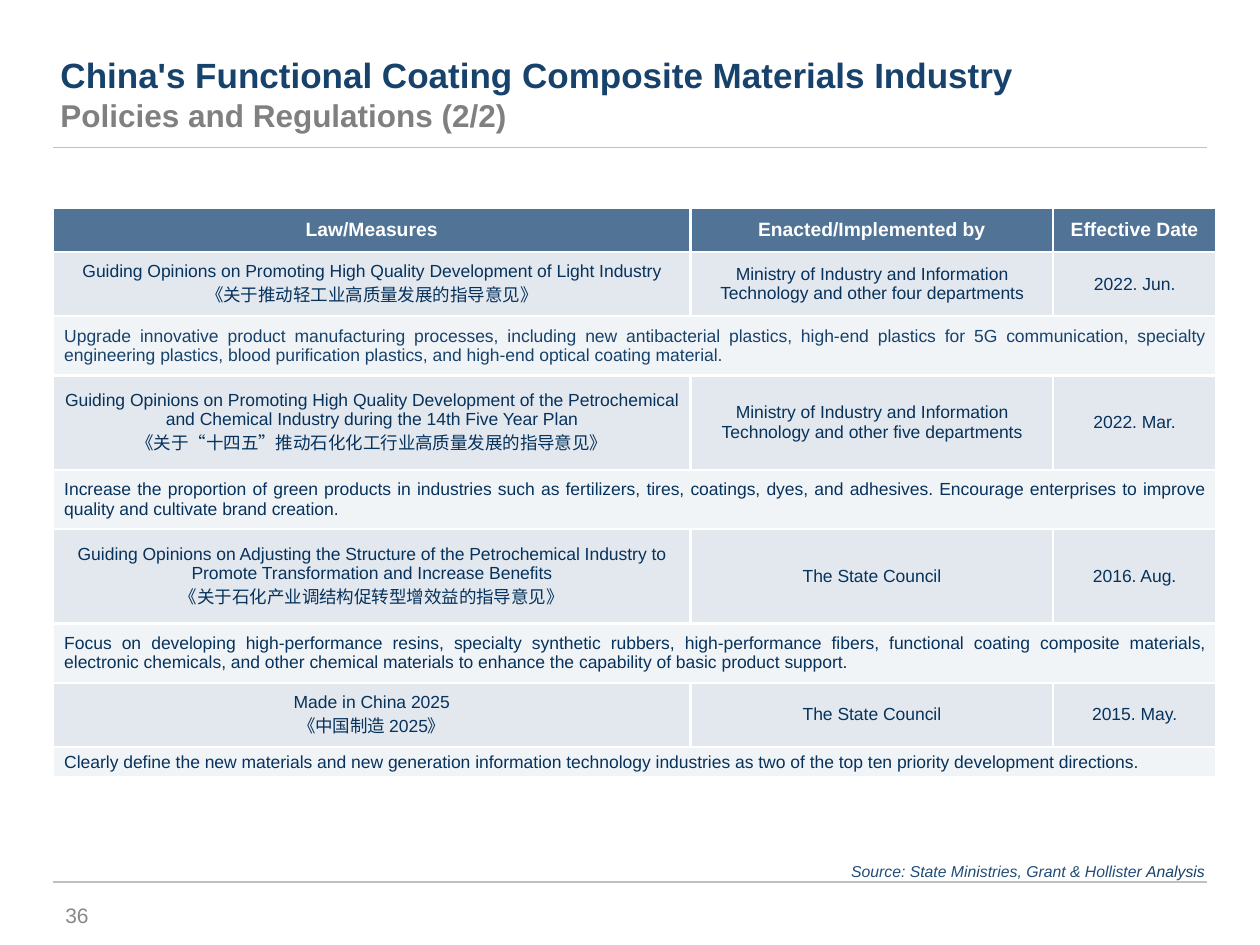
from pptx import Presentation
from pptx.dml.color import RGBColor
from pptx.enum.shapes import MSO_CONNECTOR
from pptx.enum.text import MSO_ANCHOR, MSO_AUTO_SIZE, PP_ALIGN
from pptx.oxml.ns import qn
from pptx.util import Inches, Pt
from lxml.etree import SubElement

NAVY = RGBColor(0x17, 0x42, 0x6B)
DEEP = RGBColor(0x06, 0x32, 0x5C)
BLUE = RGBColor(0x21, 0x4D, 0x79)
STEEL = RGBColor(0x51, 0x74, 0x96)
MIST = RGBColor(0xE3, 0xE8, 0xEE)
PALE = RGBColor(0xF1, 0xF4, 0xF7)
GREY = RGBColor(0x80, 0x80, 0x80)
ASH = RGBColor(0x89, 0x89, 0x89)
RULE = RGBColor(0xC0, 0xC0, 0xC0)
WHITE = RGBColor(0xFF, 0xFF, 0xFF)

HEADS = ["Law/Measures", "Enacted/Implemented by", "Effective Date"]
LAWS = [
    (["Guiding Opinions on Promoting High Quality Development of Light Industry",
      "《关于推动轻工业高质量发展的指导意见》"],
     "Ministry of Industry and Information Technology and other four departments",
     "2022. Jun.",
     "Upgrade innovative product manufacturing processes, including new antibacterial plastics, "
     "high-end plastics for 5G communication, specialty engineering plastics, blood purification "
     "plastics, and high-end optical coating material.", NAVY),
    (["Guiding Opinions on Promoting High Quality Development of the Petrochemical and Chemical "
      "Industry during the 14th Five Year Plan",
      "《关于“十四五”推动石化化工行业高质量发展的指导意见》"],
     "Ministry of Industry and Information Technology and other five departments",
     "2022. Mar.",
     "Increase the proportion of green products in industries such as fertilizers, tires, coatings, "
     "dyes, and adhesives. Encourage enterprises to improve quality and cultivate brand creation.",
     DEEP),
    (["Guiding Opinions on Adjusting the Structure of the Petrochemical Industry to Promote "
      "Transformation and Increase Benefits",
      "《关于石化产业调结构促转型增效益的指导意见》"],
     "The State Council",
     "2016. Aug.",
     "Focus on developing high-performance resins, specialty synthetic rubbers, high-performance "
     "fibers, functional coating composite materials, electronic chemicals, and other chemical "
     "materials to enhance the capability of basic product support.", DEEP),
    (["Made in China 2025", "《中国制造 2025》"],
     "The State Council",
     "2015. May.",
     "Clearly define the new materials and new generation information technology industries as two "
     "of the top ten priority development directions.", DEEP),
]
COLS = [5.06, 2.88, 1.29]
ROWS = [0.35, 0.51, 0.47, 0.75, 0.47, 0.75, 0.47, 0.51, 0.24]


class Deck:
    font = "Arial"

    def __init__(self, show):
        self.slide = show.slides.add_slide(show.slide_layouts[5])

    def run(self, para, text, size, color, bold=False, slant=False):
        run = para.add_run()
        run.text = text
        font = run.font
        font.name, font.size = self.font, Pt(size)
        font.bold, font.italic = bold, slant
        font.color.rgb = color

    def place(self, shape, left, top, width, height):
        shape.left, shape.top = Inches(left), Inches(top)
        shape.width, shape.height = Inches(width), Inches(height)

    def title(self, box, lines):
        shape = self.slide.shapes.title
        self.place(shape, *box)
        frame = shape.text_frame
        frame.auto_size = MSO_AUTO_SIZE.NONE
        frame.vertical_anchor = MSO_ANCHOR.MIDDLE
        for i, (text, size, color) in enumerate(lines):
            para = frame.add_paragraph() if i else frame.paragraphs[0]
            para.alignment = PP_ALIGN.LEFT
            self.run(para, text, size, color, bold=True)

    def text(self, box, runs, size, align, anchor, slant=False):
        shape = self.slide.shapes.add_textbox(*map(Inches, box))
        frame = shape.text_frame
        frame.word_wrap = True
        frame.vertical_anchor = anchor
        para = frame.paragraphs[0]
        para.alignment = align
        for words, color in runs:
            self.run(para, words, size, color, slant=slant)

    def rule(self, top):
        line = self.slide.shapes.add_connector(
            MSO_CONNECTOR.STRAIGHT, Inches(0.42), Inches(top), Inches(9.58), Inches(top))
        line.line.color.rgb = RULE
        line.line.width = Pt(0.75)
        SubElement(line._element.spPr, qn("a:effectLst"))

    def grid(self, left, top, cols, rows):
        frame = self.slide.shapes.add_table(
            len(rows), len(cols), Inches(left), Inches(top), Inches(sum(cols)), Inches(sum(rows)))
        table = frame.table
        for col, width in zip(table.columns, cols):
            col.width = Inches(width)
        for row, height in zip(table.rows, rows):
            row.height = Inches(height)
        for cell in table.iter_cells():
            self.edge(cell)
        return table

    def edge(self, cell):
        props = cell._tc.get_or_add_tcPr()
        for side in ("lnL", "lnR", "lnT", "lnB"):
            line = SubElement(props, qn("a:" + side), w=str(Pt(1.5)))
            fill = SubElement(line, qn("a:solidFill"))
            SubElement(fill, qn("a:srgbClr"), val=str(WHITE))

    def cell(self, cell, lines, fill, color, size=10, align=PP_ALIGN.CENTER, bold=False):
        cell.fill.solid()
        cell.fill.fore_color.rgb = fill
        cell.vertical_anchor = MSO_ANCHOR.MIDDLE
        cell.margin_top = cell.margin_bottom = Inches(0.04)
        cell.margin_left = cell.margin_right = Inches(0.09)
        frame = cell.text_frame
        for i, line in enumerate(lines):
            para = frame.add_paragraph() if i else frame.paragraphs[0]
            para.alignment = align
            self.run(para, line, size, color, bold=bold)


def main():
    show = Presentation()
    show.slide_width, show.slide_height = Inches(10), Inches(7.5)
    deck = Deck(show)
    deck.rule(1.17)
    deck.rule(7)
    deck.title((0.38, 0.41, 9.11, 0.67), [
        ("China's Functional Coating Composite Materials Industry", 20, NAVY),
        ("Policies and Regulations (2/2)", 18, GREY)])

    table = deck.grid(0.42, 1.65, COLS, ROWS)
    for i, head in enumerate(HEADS):
        deck.cell(table.cell(0, i), [head], STEEL, WHITE, size=11, bold=True)
    for i, (names, body, date, note, color) in enumerate(LAWS):
        row = 2 * i + 1
        for j, lines in enumerate((names, [body], [date])):
            deck.cell(table.cell(row, j), lines, MIST, DEEP)
        wide = table.cell(row + 1, 0)
        wide.merge(table.cell(row + 1, 2))
        deck.cell(wide, [note], PALE, color, align=PP_ALIGN.JUSTIFY)

    deck.text((3.12, 6.79, 6.54, 0.25),
              [("Source: State Ministries, Grant & Hollister ", BLUE), ("Analysis", NAVY)],
              9, PP_ALIGN.RIGHT, MSO_ANCHOR.TOP, slant=True)
    deck.text((0.42, 7.02, 2.42, 0.48), [("36", ASH)], 12, PP_ALIGN.LEFT, MSO_ANCHOR.MIDDLE)
    show.save("out.pptx")


if __name__ == "__main__":
    main()
